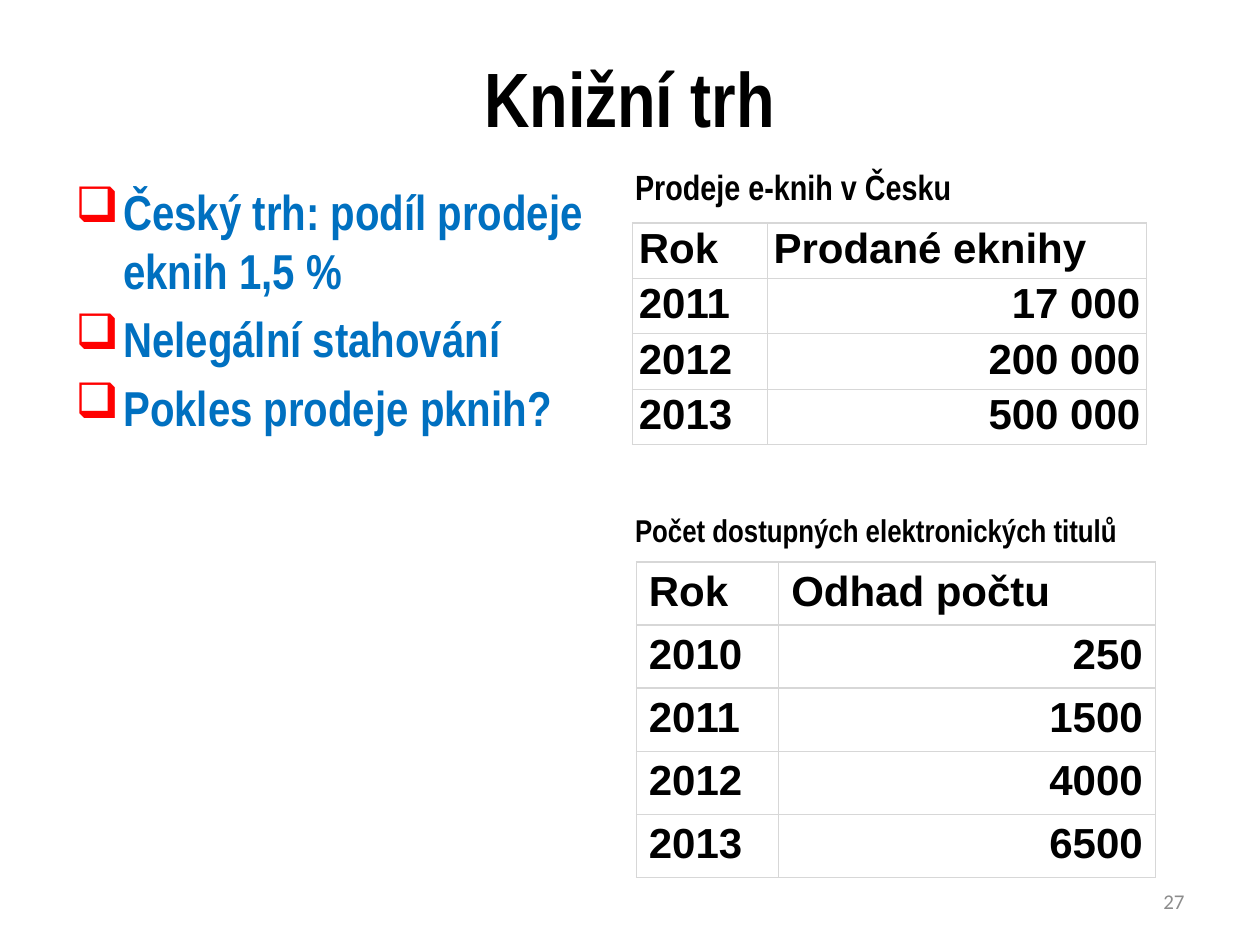
from lxml import etree
from pptx import Presentation
from pptx.dml.color import RGBColor
from pptx.enum import text
from pptx.oxml import ns
from pptx.util import Inches, Pt

COLORS = {
    "text": "000000",
    "body": "0070C0",
    "bullet": "FF0000",
    "border": "D7D7D7",
    "number": "8C8C8C",
}
NARROW = "Arial Narrow"
LEFT, CENTER, RIGHT = text.PP_ALIGN.LEFT, text.PP_ALIGN.CENTER, text.PP_ALIGN.RIGHT
TOP, MIDDLE = text.MSO_ANCHOR.TOP, text.MSO_ANCHOR.MIDDLE


def add_element(parent, tag, **attributes):
    return etree.SubElement(parent, ns.qn(tag), attributes)


def format_paragraph(paragraph, size, font="Arial", color="text", bold=True, align=LEFT):
    paragraph.alignment = align
    for run in paragraph.runs:
        run.font.name = font
        run.font.size = Pt(size)
        run.font.bold = bold
        run.font.color.rgb = RGBColor.from_string(COLORS[color])


def add_text(slide, box, lines, anchor=MIDDLE, **style):
    shape = slide.shapes.add_textbox(*map(Inches, box))
    frame = shape.text_frame
    frame.word_wrap = True
    frame.vertical_anchor = anchor
    frame.text = "\n".join(lines)
    for paragraph in frame.paragraphs:
        format_paragraph(paragraph, **style)
    return frame


def add_caption(slide, box, caption, size):
    frame = add_text(slide, box, [caption], size=size, font=NARROW)
    frame.word_wrap = False
    frame.margin_left = frame.margin_right = frame.margin_top = frame.margin_bottom = 0


def add_bullet(paragraph):
    paragraph.space_before = Pt(5.6)
    properties = paragraph._p.get_or_add_pPr()
    properties.set("marL", str(Inches(0.38)))
    properties.set("indent", str(-Inches(0.38)))
    color = add_element(properties, "a:buClr")
    add_element(color, "a:srgbClr", val=COLORS["bullet"])
    add_element(properties, "a:buChar", char="❑")


def add_borders(cell):
    properties = cell._tc.get_or_add_tcPr()
    for side in ("a:lnL", "a:lnR", "a:lnT", "a:lnB"):
        line = add_element(properties, side, w=str(Pt(0.75)))
        fill = add_element(line, "a:solidFill")
        add_element(fill, "a:srgbClr", val=COLORS["border"])


def add_sales_table(slide, left, top, widths, row_height, rows, margins):
    """Add a two-column table; figures below the header are right-aligned."""
    shape = slide.shapes.add_table(
        len(rows), len(widths), Inches(left), Inches(top),
        Inches(sum(widths)), Inches(row_height * len(rows)))
    table = shape.table
    table.first_row = table.horz_banding = False
    for column, width in zip(table.columns, widths):
        column.width = Inches(width)
    for row_index, values in enumerate(rows):
        table.rows[row_index].height = Inches(row_height)
        for column_index, value in enumerate(values):
            cell = table.cell(row_index, column_index)
            cell.margin_left = cell.margin_right = Inches(margins[0])
            cell.margin_top = cell.margin_bottom = Inches(margins[1])
            cell.text_frame.text = value
            align = RIGHT if row_index and column_index else LEFT
            format_paragraph(cell.text_frame.paragraphs[0], 24, align=align)
            add_borders(cell)
            cell.fill.background()


def main():
    presentation = Presentation()
    presentation.slide_width = Inches(10)
    presentation.slide_height = Inches(7.5)
    slide = presentation.slides.add_slide(presentation.slide_layouts[6])

    add_text(slide, (0.5, 0.3, 9, 0.93), ["Knižní trh"],
             size=44, font=NARROW, align=CENTER)
    body = add_text(
        slide, (0.5, 1.39, 4.42, 5.75),
        ["Český trh: podíl prodeje eknih 1,5 %", "Nelegální stahování",
         "Pokles prodeje pknih?"],
        anchor=TOP, size=28, font=NARROW, color="body")
    for paragraph in body.paragraphs:
        add_bullet(paragraph)

    add_caption(slide, (5.04, 1.31, 2.53, 0.34), "Prodeje e-knih v Česku", 20)
    add_sales_table(
        slide, 5.02, 1.77, (1.07, 3.01), 0.42,
        [("Rok", "Prodané eknihy"), ("2011", "17 000"),
         ("2012", "200 000"), ("2013", "500 000")],
        margins=(0.05, 0.02))

    add_caption(slide, (5.04, 4.06, 3.87, 0.3),
                "Počet dostupných elektronických titulů", 18)
    add_sales_table(
        slide, 5.05, 4.46, (1.13, 2.99), 0.5,
        [("Rok", "Odhad počtu"), ("2010", "250"), ("2011", "1500"),
         ("2012", "4000"), ("2013", "6500")],
        margins=(0.1, 0.05))

    add_text(slide, (7.17, 6.95, 2.33, 0.4), ["27"], size=12, font="Calibri",
             color="number", bold=False, align=RIGHT)
    presentation.save("out.pptx")


if __name__ == "__main__":
    main()
